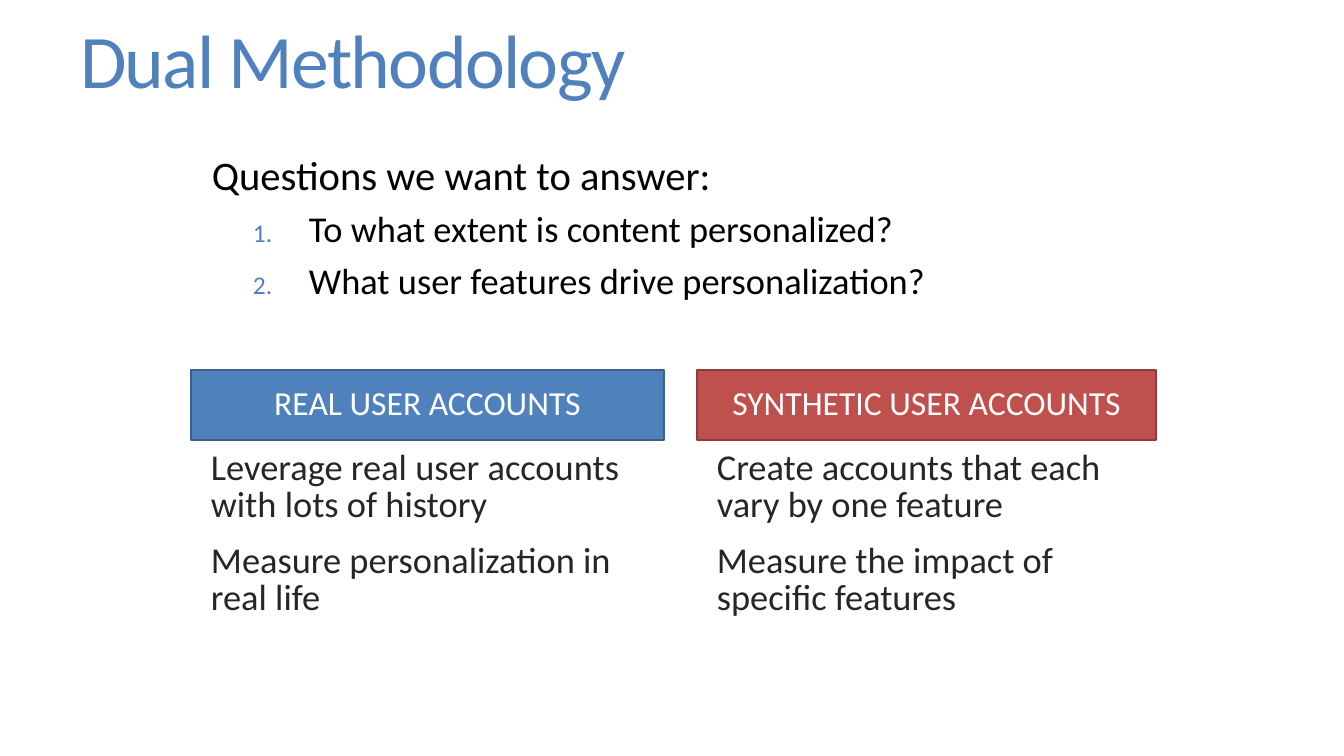
from pptx import Presentation
from pptx.dml.color import RGBColor as RGB
from pptx.enum.shapes import MSO_SHAPE as SHAPE
from pptx.enum.text import MSO_ANCHOR as ANCHOR, MSO_AUTO_SIZE as AUTO, PP_ALIGN as ALIGN
from pptx.oxml.ns import qn
from pptx.util import Pt
from lxml.etree import SubElement as sub

SCALE = 914400 / 100.8
FONT = "Calibri"
COLORS = {
    "blue": "4F81BD", "navy": "3A5F8C",
    "red": "C0504D", "wine": "8E3B39",
    "gray": "262626", "black": "000000", "white": "FFFFFF",
}


def px(n):
    return round(n * SCALE)


def rgb(name):
    return RGB.from_string(COLORS[name])


def add_text(frame, text, size=26, color="black", align=ALIGN.LEFT,
             line=None, before=0, margin=0, hang=0, level=0, track=0):
    """Add one paragraph, using the empty first one if it is free."""
    first = frame.paragraphs[0]
    para = first if not first.runs else frame.add_paragraph()
    para.alignment, para.level = align, level
    para.line_spacing, para.space_before = line, Pt(before)
    props = para._p.get_or_add_pPr()
    props.set("marL", str(px(margin)))
    props.set("indent", str(-px(hang)))
    run = para.add_run()
    run.text = text
    font = run.font
    font.name, font.size = FONT, Pt(size)
    font.color.rgb = rgb(color)
    if track:
        font._element.set("spc", str(track))
    return para


def number(para, color):
    """Give a paragraph a small coloured number."""
    props = para._p.get_or_add_pPr()
    tint = sub(props, qn("a:buClr"))
    sub(tint, qn("a:srgbClr"), val=COLORS[color])
    sub(props, qn("a:buSzPct"), val="70000")
    sub(props, qn("a:buAutoNum"), type="arabicPeriod")


def add_box(slide, x, y, w, h):
    frame = slide.shapes.add_textbox(px(x), px(y), px(w), px(h)).text_frame
    frame.word_wrap = True
    return frame


def add_title(slide, text):
    title = slide.shapes.title
    title.left, title.top = px(70), 0
    title.width, title.height = px(1055), px(131)
    frame = title.text_frame
    frame.auto_size = AUTO.NONE
    frame.vertical_anchor = ANCHOR.MIDDLE
    add_text(frame, text, size=54, color="blue", line=0.85, track=-120)


def add_asks(slide, head, asks):
    frame = add_box(slide, 202, 145, 943, 169)
    add_text(frame, head, size=29, before=7)
    for ask in asks:
        para = add_text(frame, ask, before=5.5, margin=97, hang=56, level=1)
        number(para, "blue")


def add_column(slide, x, w, head, fill, edge, points):
    # Header bar
    bar = slide.shapes.add_shape(SHAPE.RECTANGLE, px(x), px(370), px(w), px(70))
    bar.shadow.inherit = False
    bar.fill.solid()
    bar.fill.fore_color.rgb = rgb(fill)
    bar.line.color.rgb = rgb(edge)
    bar.line.width = Pt(1)
    bar.text_frame.word_wrap = True
    bar.text_frame.vertical_anchor = ANCHOR.MIDDLE
    add_text(bar.text_frame, head, size=24, color="white",
             align=ALIGN.CENTER, line=0.85, before=13)
    # Points below
    frame = add_box(slide, x, 446, w, 256)
    for point in points:
        add_text(frame, point, color="gray", line=0.85, before=13, margin=10)


def main():
    deck = Presentation()
    deck.slide_width, deck.slide_height = px(1344), px(756)
    slide = deck.slides.add_slide(deck.slide_layouts[5])

    add_title(slide, "Dual Methodology")
    add_asks(slide, "Questions we want to answer:", [
        "To what extent is content personalized?",
        "What user features drive personalization?",
    ])

    # The two methods side by side
    add_column(slide, 191, 473, "REAL USER ACCOUNTS", "blue", "navy", [
        "Leverage real user accounts with lots of history",
        "Measure personalization in real life",
    ])
    add_column(slide, 697, 459, "SYNTHETIC USER ACCOUNTS", "red", "wine", [
        "Create accounts that each vary by one feature",
        "Measure the impact of specific features",
    ])

    deck.save("out.pptx")


if __name__ == "__main__":
    main()
